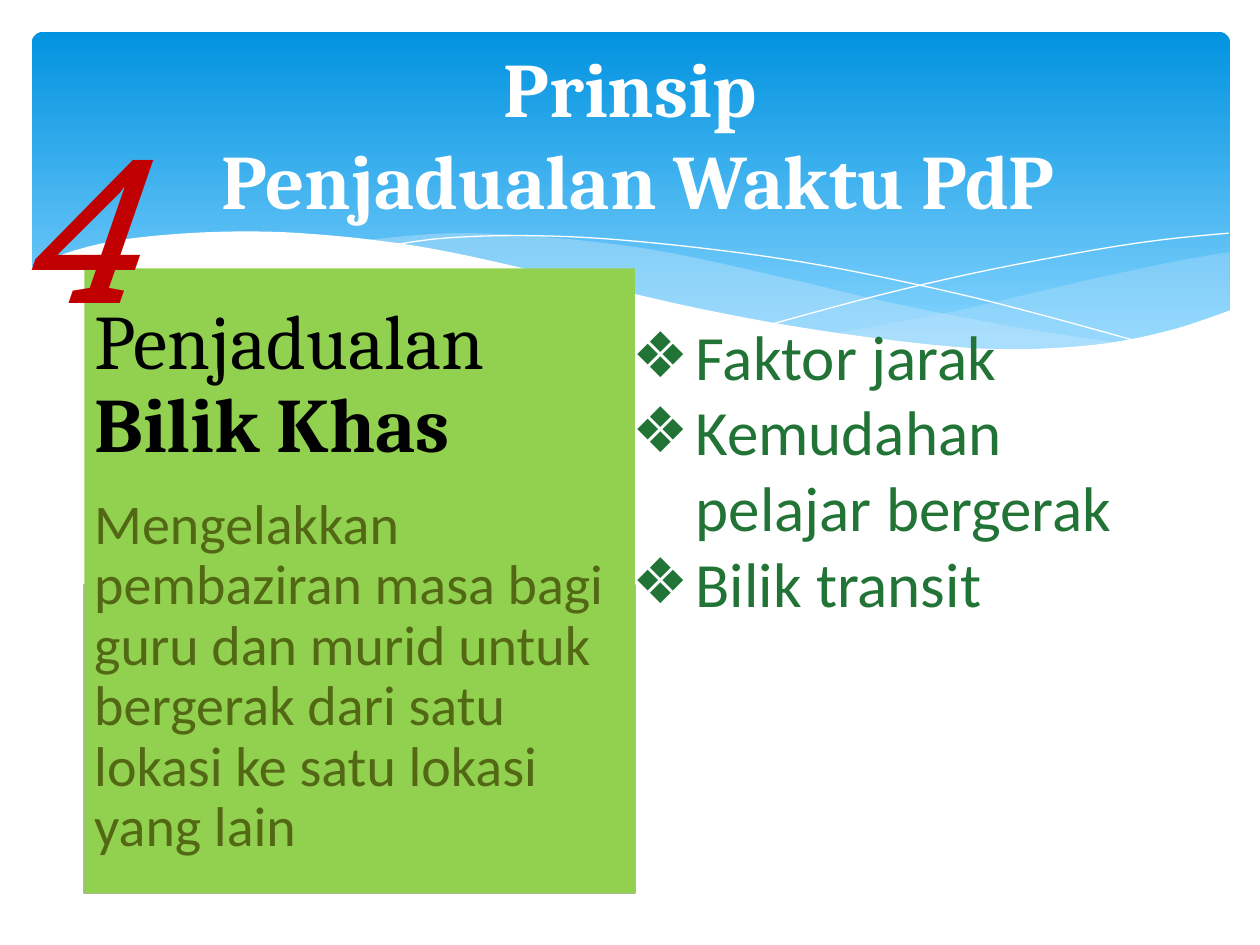
from lxml import etree
from pptx import Presentation, util as u
from pptx.dml.color import RGBColor
from pptx.enum import shapes, text
from pptx.oxml import ns

WHITE = "FFFFFF"
LIME = "92D050"
GREEN = "217436"
PALE_BLUE = "C6E7FC"


def color(value):
    return RGBColor.from_string(value)


def smooth(points, steps=6):
    padded = [points[0], *points, points[-1]]
    curve = [points[0]]
    for a, b, c, d in zip(padded, padded[1:], padded[2:], padded[3:]):
        for step in range(1, steps + 1):
            t = step / steps
            curve.append(tuple(
                (2 * q + (r - p) * t + (2 * p - 5 * q + 4 * r - s) * t ** 2
                 + (3 * q - p - 3 * r + s) * t ** 3) / 2
                for p, q, r, s in zip(a, b, c, d)))
    return curve


class SlideBuilder:
    styles = {
        "title": {"name": "Cambria", "size": u.Pt(44), "bold": True, "color": WHITE},
        "heading": {"name": "Cambria", "size": u.Pt(44), "bold": False, "color": "000000"},
        "emphasis": {"name": "Cambria", "size": u.Pt(44), "bold": True, "color": "000000"},
        "reason": {"name": "Calibri", "size": u.Pt(32), "bold": False, "color": "526814"},
        "list": {"name": "Calibri", "size": u.Pt(36), "bold": False, "color": GREEN},
        "number": {"name": "Roboto Slab", "size": u.Pt(115), "italic": True, "color": "C00000"},
    }

    def __init__(self, presentation):
        self.slide = presentation.slides.add_slide(presentation.slide_layouts[1])

    def place(self, shape, box):
        for name, value in zip(("left", "top", "width", "height"), box):
            setattr(shape, name, u.Cm(value))

    def add_text(self, paragraph, content, style):
        run = paragraph.add_run()
        run.text = content
        for name, value in self.styles[style].items():
            if name == "color":
                run.font.color.rgb = color(value)
            else:
                setattr(run.font, name, value)

    def paint(self, shape, fill=None, line=None, width=0, opacity=100):
        shape.shadow.inherit = False
        if fill:
            shape.fill.solid()
            shape.fill.fore_color.rgb = color(fill)
            if opacity < 100:
                tint = shape.element.spPr.find(".//" + ns.qn("a:srgbClr"))
                etree.SubElement(tint, ns.qn("a:alpha"), val=str(opacity * 1000))
        else:
            shape.fill.background()
        if line:
            shape.line.color.rgb = color(line)
            shape.line.width = u.Pt(width)
        else:
            shape.line.fill.background()

    def block(self, box, kind=shapes.MSO_SHAPE.RECTANGLE, **paint):
        shape = self.slide.shapes.add_shape(kind, *map(u.Cm, box))
        self.paint(shape, **paint)
        return shape

    def banner(self, box, top, bottom):
        shape = self.block(box, shapes.MSO_SHAPE.ROUNDED_RECTANGLE)
        shape.adjustments[0] = 0.034
        shape.fill.gradient()
        shape.fill.gradient_angle = 270
        stops = shape.fill.gradient_stops
        for stop, position, value in zip(stops, (0, 0.9), (top, bottom)):
            stop.position = position
            stop.color.rgb = color(value)

    def wave(self, points, edge=(), close=True, **paint):
        outline = [(u.Cm(x), u.Cm(y)) for x, y in smooth(points) + list(edge)]
        builder = self.slide.shapes.build_freeform(*outline[0])
        builder.add_line_segments(outline[1:], close=close)
        self.paint(builder.convert_to_shape(), **paint)

    def placeholder(self, index, box):
        shape = self.slide.placeholders[index]
        self.place(shape, box)
        shape.element.getparent().append(shape.element)
        shape.text_frame.auto_size = text.MSO_AUTO_SIZE.NONE
        return shape.text_frame

    def title(self, box, first, second):
        frame = self.placeholder(0, box)
        frame.vertical_anchor = text.MSO_ANCHOR.MIDDLE
        paragraph = frame.paragraphs[0]
        paragraph.alignment = text.PP_ALIGN.CENTER
        self.add_text(paragraph, first, "title")
        paragraph.add_line_break()
        self.add_text(paragraph, second, "title")

    def bullets(self, box, items):
        frame = self.placeholder(1, box)
        for index, item in enumerate(items):
            paragraph = frame.add_paragraph() if index else frame.paragraphs[0]
            paragraph.space_before = u.Pt(0)
            self.add_text(paragraph, item, "list")
            properties = paragraph._p.get_or_add_pPr()
            properties.set("marL", str(u.Cm(1.27)))
            properties.set("indent", str(-u.Cm(1.27)))
            tint = etree.SubElement(properties, ns.qn("a:buClr"))
            etree.SubElement(tint, ns.qn("a:srgbClr"), val=GREEN)
            etree.SubElement(properties, ns.qn("a:buChar"), char="❖")

    def panel(self, box, paragraphs):
        frame = self.block(box, fill=LIME).text_frame
        frame.word_wrap = True
        frame.vertical_anchor = text.MSO_ANCHOR.MIDDLE
        for side in ("left", "top", "right", "bottom"):
            setattr(frame, f"margin_{side}", u.Cm(0.2))
        for index, (gap, runs) in enumerate(paragraphs):
            paragraph = frame.add_paragraph() if index else frame.paragraphs[0]
            formats = {"alignment": text.PP_ALIGN.LEFT, "line_spacing": 0.9,
                       "space_after": u.Pt(gap)}
            for name, value in formats.items():
                setattr(paragraph, name, value)
            for content, style in runs:
                self.add_text(paragraph, content, style)

    def label(self, box, content, style):
        frame = self.slide.shapes.add_textbox(*map(u.Cm, box)).text_frame
        frame.word_wrap = True
        self.add_text(frame.paragraphs[0], content, style)


def main():
    presentation = Presentation()
    presentation.slide_width = u.Cm(25.4)
    presentation.slide_height = u.Cm(19.05)
    builder = SlideBuilder(presentation)

    builder.banner((0.64, 0.64, 24.16, 6.86), "0293E0", "83D3FE")
    builder.wave(
        [(16.79, 6.73), (18.26, 6.91), (19.53, 7.04), (20.68, 7.06),
         (22.15, 6.96), (23.57, 6.68), (24.79, 6.27)],
        smooth([(24.79, 5.08), (23.75, 5.26), (21.87, 5.66), (19.13, 6.3), (16.79, 6.73)]),
        fill=PALE_BLUE, opacity=29)
    builder.wave(
        [(22.68, 6.93), (20.5, 6.6), (17.93, 6.1), (15.98, 5.64),
         (13.41, 5.08), (11.23, 4.8), (9.17, 4.7), (7.26, 4.85)],
        smooth([(7.26, 4.85), (9.19, 5.16), (11.4, 5.64), (14.38, 6.3),
                (16.51, 6.71), (18.69, 6.99), (20.5, 7.06), (22.68, 6.93)]),
        fill=PALE_BLUE, opacity=40)
    for crest in (
        [(7.85, 4.95), (8.97, 4.8), (10.57, 4.75), (12.42, 4.83), (14.78, 5.08),
         (16.89, 5.41), (19.3, 5.92), (21.11, 6.38), (23.04, 6.91)],
        [(15.57, 6.53), (17.65, 5.97), (19.71, 5.49), (22, 5.05),
         (23.47, 4.83), (24.77, 4.7)],
    ):
        builder.wave(crest, close=False, line=WHITE)
    builder.wave(
        [(0.58, 5.41), (1.5, 5.05), (2.69, 4.8), (4.5, 4.67), (6.35, 4.72),
         (8.64, 5), (11.35, 5.59), (14.1, 6.22), (16.46, 6.65), (18.9, 6.96),
         (20.55, 7.04), (22.23, 6.93), (23.62, 6.65), (24.82, 6.25)],
        [(24.82, 8.36), (0.58, 8.36)], fill=WHITE)

    builder.title((1.27, 0.94, 22.86, 3.48), "Prinsip", " Penjadualan Waktu PdP")
    builder.block((1.7, 11.79, 11.1, 6.22), fill=LIME, line="B4B4B4", width=1.25)
    builder.panel((1.7, 5.41, 11.1, 12.6), [
        (15.4, [("Penjadualan ", "heading"), ("Bilik Khas", "emphasis")]),
        (11.2, [("Mengelakkan pembaziran masa bagi guru dan murid untuk "
                 "bergerak dari satu lokasi ke satu lokasi yang lain", "reason")]),
    ])
    builder.bullets((12.5, 6.27, 10.8, 9.5),
                    ["Faktor jarak", "Kemudahan pelajar bergerak", "Bilik transit"])
    builder.label((0.05, 1.93, 1.07, 5.18), "4", "number")
    presentation.save("out.pptx")


if __name__ == "__main__":
    main()
